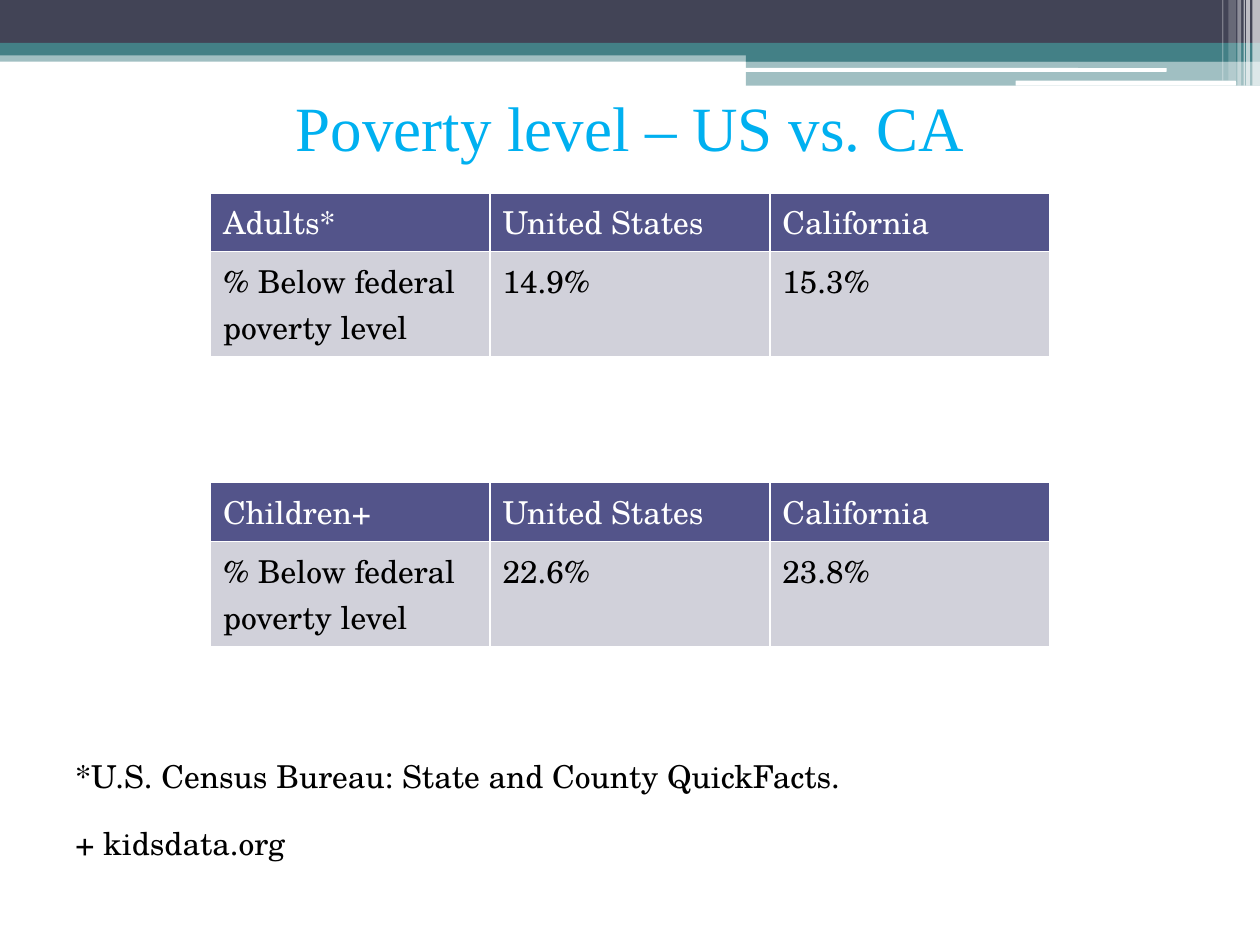
from lxml.etree import SubElement
from pptx import Presentation
from pptx.dml.color import RGBColor
from pptx.enum.shapes import MSO_SHAPE
from pptx.enum.text import MSO_ANCHOR, PP_ALIGN
from pptx.oxml.ns import qn
from pptx.util import Inches, Pt

WHITE = RGBColor(0xFF, 0xFF, 0xFF)
BLACK = RGBColor(0, 0, 0)
SLATE = RGBColor(0x42, 0x44, 0x56)
TEAL = RGBColor(0x43, 0x80, 0x86)
SKY = RGBColor(0x00, 0xB0, 0xF0)
INDIGO = RGBColor(0x53, 0x54, 0x8A)
LAVENDER = RGBColor(0xD1, 0xD1, 0xDA)

BODY_FONT = "TeX Gyre Schola"
TITLE_FONT = "Times New Roman"

# left, top, width, height, colour, opacity in percent
BANDS = [
    (0, 0.4, 10, 0.09, TEAL, 50),
    (0, 0, 10, 0.34, SLATE, 100),
    (0, 0.34, 10, 0.1, TEAL, 100),
    (5.92, 0.39, 4.08, 0.1, TEAL, 100),
    (5.92, 0.48, 4.08, 0.2, TEAL, 50),
]
WHITE_BARS = [(5.91, 0.54, 3.35, 0.03), (8.06, 0.64, 1.75, 0.04)]
# left, width, height, opacity in percent
STRIPES = [
    (9.94, 0.06, 0.68, 65),
    (9.89, 0.03, 0.68, 65),
    (9.87, 0.01, 0.68, 60),
    (9.82, 0.03, 0.68, 40),
    (9.75, 0.06, 0.64, 20),
    (9.7, 0.01, 0.64, 30),
]
# top, group, United States, California
POVERTY_TABLES = [
    (1.53, "Adults*", "14.9%", "15.3%"),
    (3.83, "Children+", "22.6%", "23.8%"),
]


class SlideBuilder:
    def __init__(self, page, font=BODY_FONT, size=18):
        self.page = page
        self.font = font
        self.size = size

    def bar(self, left, top, width, height, color, opacity=100,
            kind=MSO_SHAPE.RECTANGLE):
        shape = self.page.shapes.add_shape(
            kind, Inches(left), Inches(top), Inches(width), Inches(height))
        shape.shadow.inherit = False
        shape.line.fill.background()
        shape.fill.solid()
        shape.fill.fore_color.rgb = color
        if opacity < 100:
            fill_color = shape.element.spPr.find(qn("a:solidFill"))[0]
            SubElement(fill_color, qn("a:alpha"), val=str(opacity * 1000))

    def add_span(self, para, text, color=BLACK, font=None, size=None):
        span = para.add_run()
        span.text = text
        span.font.name = font or self.font
        span.font.size = Pt(size or self.size)
        span.font.color.rgb = color

    def text_box(self, left, top, width, height, anchor=MSO_ANCHOR.TOP):
        box = self.page.shapes.add_textbox(
            Inches(left), Inches(top), Inches(width), Inches(height))
        frame = box.text_frame
        frame.word_wrap = True
        frame.vertical_anchor = anchor
        return frame

    def title(self, text):
        frame = self.text_box(0.5, 0.42, 9, 1.17, MSO_ANCHOR.MIDDLE)
        para = frame.paragraphs[0]
        para.alignment = PP_ALIGN.CENTER
        self.add_span(para, text, SKY, TITLE_FONT, 36)

    def footnotes(self, notes, gap):
        frame = self.text_box(0.5, 5.96, 6.42, 1.01)
        for index, note in enumerate(notes):
            para = frame.add_paragraph() if index else frame.paragraphs[0]
            if index:
                para.space_before = Pt(gap)
            self.add_span(para, note)

    def cell_borders(self, cell):
        properties = cell._tc.get_or_add_tcPr()
        for side in ("lnL", "lnR", "lnT", "lnB"):
            line = SubElement(properties, qn(f"a:{side}"), w=str(Pt(1)))
            fill = SubElement(line, qn("a:solidFill"))
            SubElement(fill, qn("a:srgbClr"), val=str(WHITE))

    def table(self, top, rows):
        grid = self.page.shapes.add_table(
            len(rows), len(rows[0]), Inches(1.67), Inches(top),
            Inches(6.66), Inches(0.41 * len(rows))).table
        for row, values in enumerate(rows):
            fill, ink = (LAVENDER, BLACK) if row else (INDIGO, WHITE)
            for column, value in enumerate(values):
                cell = grid.cell(row, column)
                self.cell_borders(cell)
                cell.fill.solid()
                cell.fill.fore_color.rgb = fill
                self.add_span(cell.text_frame.paragraphs[0], value, ink)


def main():
    deck = Presentation()
    deck.slide_width, deck.slide_height = Inches(10), Inches(7.5)
    builder = SlideBuilder(deck.slides.add_slide(deck.slide_layouts[6]))

    for band in BANDS:
        builder.bar(*band)
    for bar in WHITE_BARS:
        builder.bar(*bar, WHITE, kind=MSO_SHAPE.ROUNDED_RECTANGLE)
    for left, width, height, opacity in STRIPES:
        builder.bar(left, 0, width, height, WHITE, opacity)

    for top, group, nation, state in POVERTY_TABLES:
        builder.table(top, [
            (group, "United States", "California"),
            ("% Below federal poverty level", nation, state),
        ])
    builder.title("Poverty level – US vs. CA")
    builder.footnotes(
        ["*U.S. Census Bureau: State and County QuickFacts.",
         "+ kidsdata.org"], gap=16.5)
    deck.save("out.pptx")


if __name__ == "__main__":
    main()
